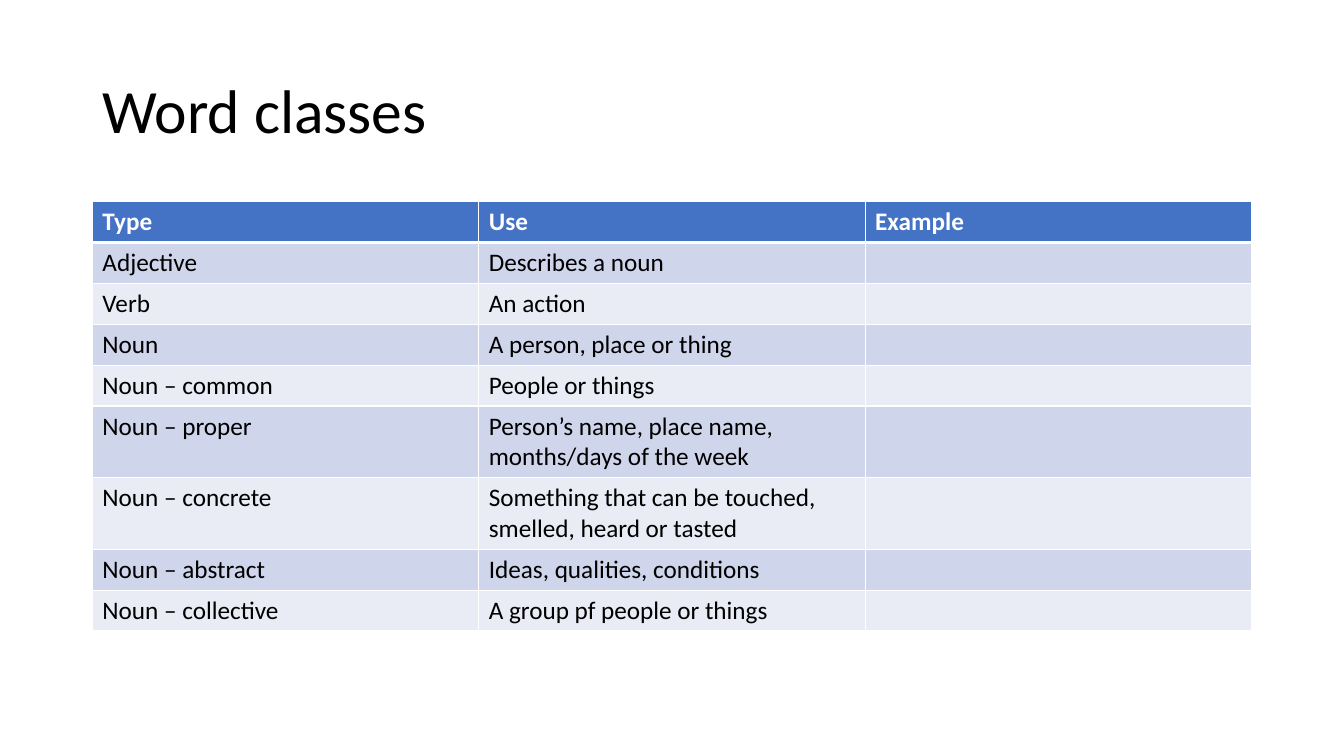
from typing import NamedTuple

from lxml.etree import SubElement
from pptx import Presentation
from pptx.dml.color import RGBColor
from pptx.enum.text import MSO_ANCHOR, PP_ALIGN
from pptx.oxml.ns import qn
from pptx.util import Pt

GRID_UNIT = Pt(6)
GRID_COLUMNS, GRID_ROWS = 160, 90
MARGIN = 11
CONTENT_WIDTH = GRID_COLUMNS - 2 * MARGIN
ROW_HEIGHT = Pt(29.2)
FONT = "Calibri"
COLORS = {
    "text": "000000",
    "light": "FFFFFF",
    "header": "4472C4",
    "odd_row": "CFD5EA",
    "even_row": "E9EBF5",
}


class WordClass(NamedTuple):
    type: str
    use: str
    example: str = ""


HEADER = WordClass("Type", "Use", "Example")
WORD_CLASSES = [
    WordClass("Adjective", "Describes a noun"),
    WordClass("Verb", "An action"),
    WordClass("Noun", "A person, place or thing"),
    WordClass("Noun – common", "People or things"),
    WordClass("Noun – proper", "Person’s name, place name, months/days of the week"),
    WordClass("Noun – concrete", "Something that can be touched, smelled, heard or tasted"),
    WordClass("Noun – abstract", "Ideas, qualities, conditions"),
    WordClass("Noun – collective", "A group pf people or things"),
]


def grid(units: float) -> int:
    """Turn grid units into a length on the slide."""
    return round(units * GRID_UNIT)


def write_text(text_frame, text: str, *, size: float, color: str = "text",
               bold: bool = False, line_spacing: float = 1.0) -> None:
    paragraph = text_frame.paragraphs[0]
    paragraph.alignment = PP_ALIGN.LEFT
    paragraph.line_spacing = line_spacing
    paragraph.font.size = Pt(size)
    if not text:
        return
    run = paragraph.add_run()
    run.text = text
    run.font.name = FONT
    run.font.size = Pt(size)
    run.font.bold = bold
    run.font.color.rgb = RGBColor.from_string(COLORS[color])


def set_borders(cell, *, top: float = 1, bottom: float = 1) -> None:
    """Draw light borders; call before the cell gets its fill."""
    properties = cell._tc.get_or_add_tcPr()
    for side, width in (("L", 1), ("R", 1), ("T", top), ("B", bottom)):
        line = SubElement(properties, qn(f"a:ln{side}"), w=str(Pt(width)))
        fill = SubElement(line, qn("a:solidFill"))
        SubElement(fill, qn("a:srgbClr"), val=COLORS["light"])


def add_title(slide, text: str) -> None:
    title = slide.shapes.title
    title.left, title.top = grid(MARGIN), grid(4.8)
    title.width, title.height = grid(CONTENT_WIDTH), grid(17.4)
    title.text_frame.vertical_anchor = MSO_ANCHOR.MIDDLE
    write_text(title.text_frame, text, size=44, line_spacing=0.9)


def add_word_table(slide, rows: list[WordClass]) -> None:
    table = slide.shapes.add_table(
        len(rows), len(HEADER), grid(MARGIN), grid(24),
        grid(CONTENT_WIDTH), ROW_HEIGHT * len(rows)).table
    for row_index, word_class in enumerate(rows):
        table.rows[row_index].height = ROW_HEIGHT
        is_header = row_index == 0
        if is_header:
            fill = "header"
        else:
            fill = "odd_row" if row_index % 2 else "even_row"
        for column_index, text in enumerate(word_class):
            cell = table.cell(row_index, column_index)
            set_borders(cell, top=3 if row_index == 1 else 1,
                        bottom=3 if is_header else 1)
            cell.fill.solid()
            cell.fill.fore_color.rgb = RGBColor.from_string(COLORS[fill])
            write_text(cell.text_frame, text, size=18, bold=is_header,
                       color="light" if is_header else "text")


def main() -> None:
    presentation = Presentation()
    presentation.slide_width = grid(GRID_COLUMNS)
    presentation.slide_height = grid(GRID_ROWS)
    title_only = presentation.slide_layouts[5]
    slide = presentation.slides.add_slide(title_only)
    add_title(slide, "Word classes")
    add_word_table(slide, [HEADER, *WORD_CLASSES])
    presentation.save("out.pptx")


if __name__ == "__main__":
    main()
